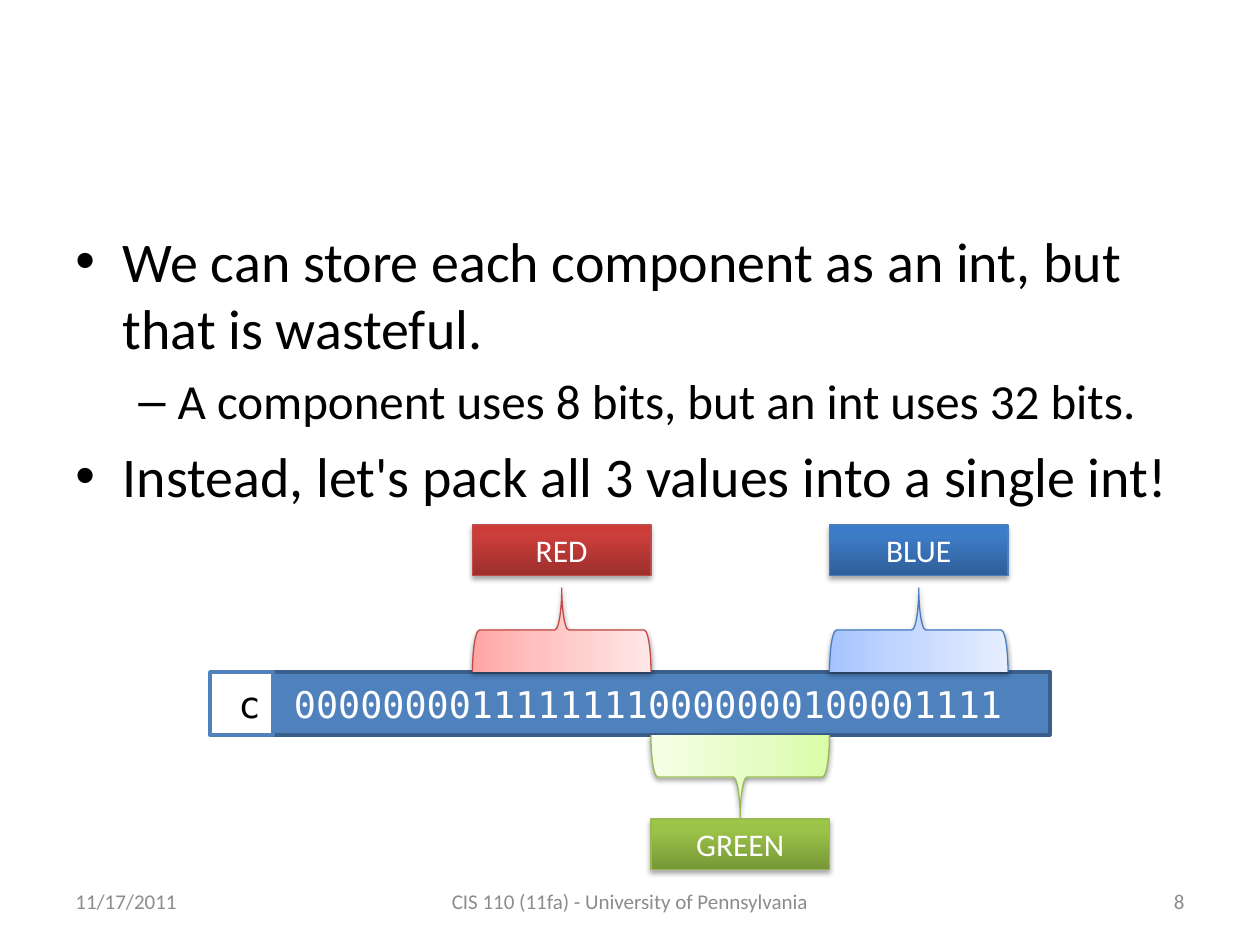
import pptx
import pptx.util
import pptx.oxml
import pptx.oxml.ns
from pptx.dml.color import RGBColor
from pptx.enum.shapes import MSO_SHAPE
from pptx.enum.text import MSO_ANCHOR, PP_ALIGN

Pt = pptx.util.Pt

# Content
BULLETS = [  # level, text
    (0, "We can store each component as an int, but that is wasteful."),
    (1, "A component uses 8 bits, but an int uses 32 bits."),
    (0, "Instead, let's pack all 3 values into a single int!"),
]
LEVELS = [  # bullet, size, left margin, hanging indent
    ("•", 32, 27, 27),
    ("–", 28, 58.5, 22.5),
]
VARIABLE = "c"
BITS = "00000000111111110000000100001111"
COMPONENTS = [  # name, side of the bit row
    ("RED", "above"),
    ("GREEN", "below"),
    ("BLUE", "above"),
]
FOOTER = [  # text, left, width, alignment
    ("11/17/2011", 36, 168, PP_ALIGN.LEFT),
    ("CIS 110 (11fa) - University of Pennsylvania", 246, 228, PP_ALIGN.CENTER),
    ("8", 516, 168, PP_ALIGN.RIGHT),
]

# Style
COLORS = {
    "text": "000000", "footer": "8C8C8C", "white": "FFFFFF",
    "row": "4F81BD", "row edge": "3A5F8C",
}
LINES = {"RED": "BF4C48", "GREEN": "98B955", "BLUE": "4B7EBC"}
LABEL_STOPS = {
    "RED": [(0, "9C2F2D"), (80, "CB3E3A"), (100, "CE3B37")],
    "GREEN": [(0, "779737"), (80, "9BC348"), (100, "9DC746")],
    "BLUE": [(0, "2F5F99"), (80, "3D7CC7"), (100, "3A7CCB")],
}
BRACE_STOPS = {
    "RED": [(0, "FFA6A5"), (35, "FFC0BF"), (100, "FFE7E7")],
    "GREEN": [(0, "DAFDA7"), (35, "E4FCC2"), (100, "F5FFE7")],
    "BLUE": [(0, "A4C4FF"), (35, "BFD4FF"), (100, "E6EEFF")],
}
SANS, MONO = "Calibri", "DejaVu Sans Mono"
ROW_SIZE = 21  # eight digits fill one byte width

# Layout
ROW_TOP, ROW_HEIGHT = 384, 36
VARIABLE_LEFT, VARIABLE_WIDTH, BITS_WIDTH = 120, 36, 444
BITS_LEFT = VARIABLE_LEFT + VARIABLE_WIDTH
BYTE_LEFT, BYTE_WIDTH = 270, 102
BRACE_DEPTH = 48
LABEL_HEIGHT = 29
LABEL_TOP = {"above": 300, "below": 468}


def write(frame, text, *, size, color, font=SANS, align=PP_ALIGN.LEFT,
          anchor=MSO_ANCHOR.TOP, new_paragraph=False):
    frame.word_wrap = True
    frame.vertical_anchor = anchor
    paragraph = frame.add_paragraph() if new_paragraph else frame.paragraphs[0]
    paragraph.alignment = align
    run = paragraph.add_run()
    run.text = text
    run.font.size = Pt(size)
    run.font.name = font
    run.font.color.rgb = RGBColor.from_string(color)
    return paragraph


def add_bullet(paragraph, mark, left, hanging):
    properties = paragraph._p.get_or_add_pPr()
    properties.set("marL", str(Pt(left)))
    properties.set("indent", str(-Pt(hanging)))
    ns = pptx.oxml.ns.nsdecls("a")
    for xml in (f'<a:buFont {ns} typeface="Arial"/>',
                f'<a:buChar {ns} char="{mark}"/>'):
        properties.append(pptx.oxml.parse_xml(xml))


def add_block(slide, kind, left, top, width, height, line, weight, fill=None):
    block = slide.shapes.add_shape(kind, Pt(left), Pt(top), Pt(width), Pt(height))
    block.shadow.inherit = False
    block.line.color.rgb = RGBColor.from_string(line)
    block.line.width = Pt(weight)
    if fill:
        block.fill.solid()
        block.fill.fore_color.rgb = RGBColor.from_string(fill)
    return block


def shade(block, stops, opacity, distance):
    """Give a block an upward gradient and a soft shadow below it."""
    ns = pptx.oxml.ns.nsdecls("a")
    stop_xml = "".join(
        f'<a:gs pos="{position * 1000}"><a:srgbClr val="{color}"/></a:gs>'
        for position, color in stops)
    properties = block._element.spPr
    properties.find(pptx.oxml.ns.qn("a:prstGeom")).addnext(pptx.oxml.parse_xml(
        f'<a:gradFill {ns} rotWithShape="1"><a:gsLst>{stop_xml}</a:gsLst>'
        '<a:lin ang="16200000" scaled="0"/></a:gradFill>'))
    properties.find(pptx.oxml.ns.qn("a:effectLst")).append(pptx.oxml.parse_xml(
        f'<a:outerShdw {ns} blurRad="{Pt(3.1)}" dist="{Pt(distance)}" '
        'dir="5400000" rotWithShape="0"><a:srgbClr val="000000">'
        f'<a:alpha val="{opacity * 1000}"/></a:srgbClr></a:outerShdw>'))


def main():
    deck = pptx.Presentation()
    deck.slide_width, deck.slide_height = Pt(720), Pt(540)
    slide = deck.slides.add_slide(deck.slide_layouts[6])

    # Bulleted text
    body = slide.shapes.add_textbox(Pt(36), Pt(126), Pt(648), Pt(162)).text_frame
    for index, (level, text) in enumerate(BULLETS):
        mark, size, left, hanging = LEVELS[level]
        paragraph = write(body, text, size=size, color=COLORS["text"],
                          new_paragraph=index > 0)
        paragraph.level = level
        paragraph.space_before = Pt(size * 0.2)
        add_bullet(paragraph, mark, left, hanging)

    # Footer
    for text, left, width, align in FOOTER:
        box = slide.shapes.add_textbox(Pt(left), Pt(500.5), Pt(width), Pt(28.75))
        write(box.text_frame, text, size=12, color=COLORS["footer"],
              align=align, anchor=MSO_ANCHOR.MIDDLE)

    # Variable and its bits, the second byte starting at the first brace
    bits = add_block(slide, MSO_SHAPE.RECTANGLE, BITS_LEFT, ROW_TOP, BITS_WIDTH,
                     ROW_HEIGHT, COLORS["row edge"], 2, COLORS["row"])
    bits.text_frame.margin_left = Pt(BYTE_LEFT - BYTE_WIDTH - BITS_LEFT)
    write(bits.text_frame, BITS, size=ROW_SIZE, color=COLORS["white"], font=MONO,
          anchor=MSO_ANCHOR.MIDDLE)
    variable = add_block(slide, MSO_SHAPE.RECTANGLE, VARIABLE_LEFT, ROW_TOP,
                         VARIABLE_WIDTH, ROW_HEIGHT, COLORS["row"], 2,
                         COLORS["white"])
    write(variable.text_frame, VARIABLE, size=ROW_SIZE, color=COLORS["text"],
          font=MONO, align=PP_ALIGN.RIGHT, anchor=MSO_ANCHOR.MIDDLE)

    # One brace and one label for each byte
    for index, (name, side) in enumerate(COMPONENTS):
        left = BYTE_LEFT + index * BYTE_WIDTH
        above = side == "above"
        center_x = left + BYTE_WIDTH / 2
        center_y = (ROW_TOP - BRACE_DEPTH / 2 if above
                    else ROW_TOP + ROW_HEIGHT + BRACE_DEPTH / 2)
        brace = add_block(slide, MSO_SHAPE.LEFT_BRACE, center_x - BRACE_DEPTH / 2,
                          center_y - BYTE_WIDTH / 2, BRACE_DEPTH, BYTE_WIDTH,
                          LINES[name], 0.75)
        brace.rotation = 90 if above else 270
        shade(brace, BRACE_STOPS[name], 38, 1.6)

        label = add_block(slide, MSO_SHAPE.RECTANGLE, left, LABEL_TOP[side],
                          BYTE_WIDTH, LABEL_HEIGHT, LINES[name], 0.75)
        shade(label, LABEL_STOPS[name], 35, 1.8)
        write(label.text_frame, name, size=18, color=COLORS["white"],
              align=PP_ALIGN.CENTER)

    deck.save("out.pptx")


if __name__ == "__main__":
    main()
